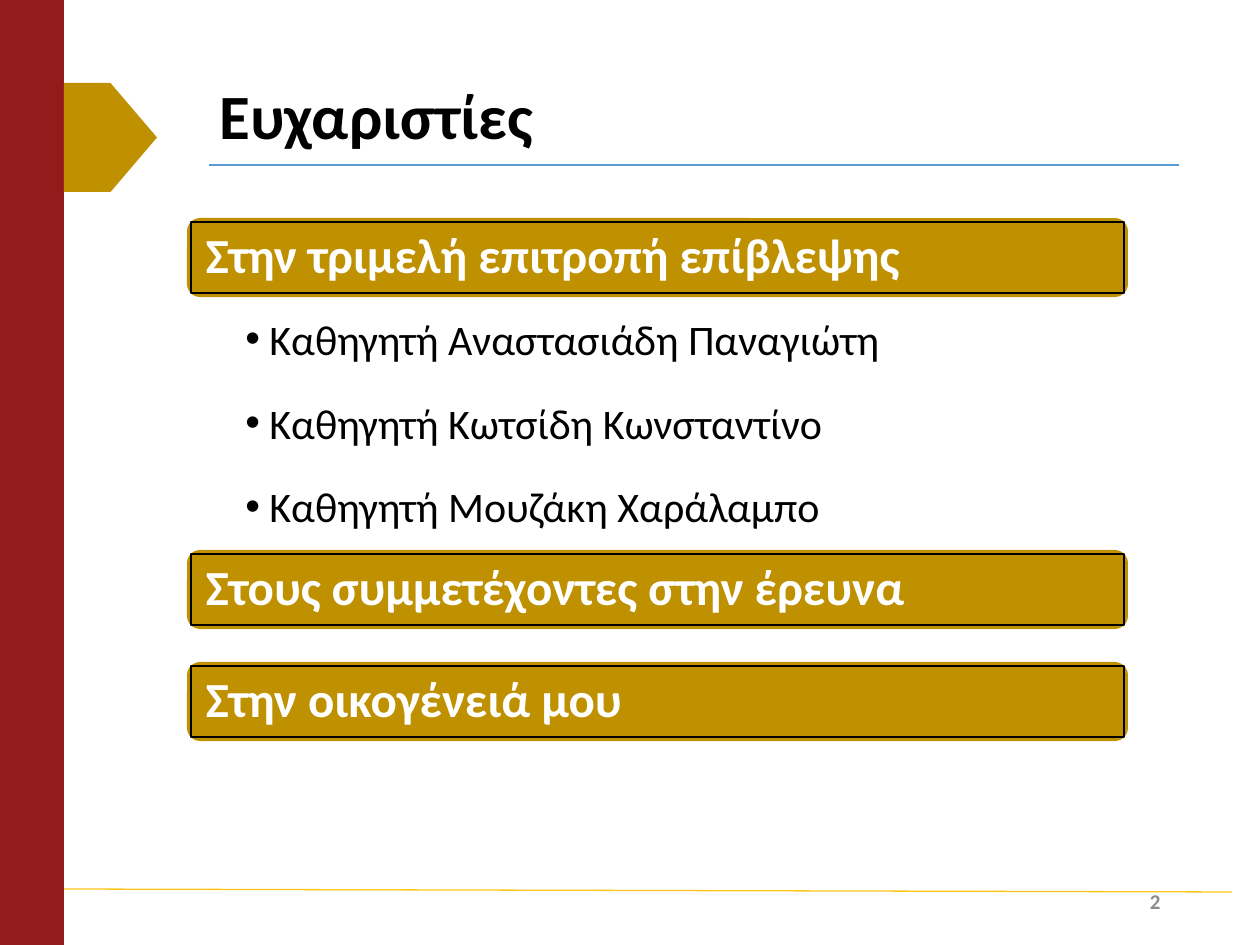
"""Build the acknowledgements slide with three headed bars and a list of names."""
from lxml import etree
from pptx import Presentation
from pptx.dml.color import RGBColor
from pptx.enum.shapes import MSO_CONNECTOR, MSO_SHAPE
from pptx.enum.text import MSO_ANCHOR, PP_ALIGN
from pptx.oxml.ns import qn
from pptx.util import Emu, Pt

STRAIGHT = MSO_CONNECTOR.STRAIGHT
RECTANGLE = MSO_SHAPE.RECTANGLE
ROUNDED = MSO_SHAPE.ROUNDED_RECTANGLE
PENTAGON = MSO_SHAPE.PENTAGON
MIDDLE, TOP = MSO_ANCHOR.MIDDLE, MSO_ANCHOR.TOP
LEFT, RIGHT = PP_ALIGN.LEFT, PP_ALIGN.RIGHT
SCALE = 914400 / 126
COLORS = {"red": "931B1B", "gold": "BF9000", "blue": "5B9BD5", "yellow": "FFC61A",
          "black": "000000", "white": "FFFFFF", "gray": "8C8C8C"}


def add_block(kind, box, color):
    block = slide.shapes.add_shape(kind, *[Emu(round(n * SCALE)) for n in box])
    block.shadow.inherit = False
    block.fill.solid()
    block.fill.fore_color.rgb = RGBColor.from_string(COLORS[color])
    block.line.fill.background()
    return block


def write_text(shape, lines, size, color, bold, anchor, align, spacing, bulleted=False):
    frame = shape.text_frame
    frame.word_wrap = True
    frame.vertical_anchor = anchor
    frame.text = "\n".join(lines)
    for index, paragraph in enumerate(frame.paragraphs):
        if bulleted:
            properties = paragraph._p.get_or_add_pPr()
            properties.set("marL", str(round(24 * SCALE)))
            properties.set("indent", str(round(-24 * SCALE)))
            etree.SubElement(properties, qn("a:buFont")).set("typeface", "Arial")
            etree.SubElement(properties, qn("a:buChar")).set("char", "•")
        space = Pt(7.5) if index else Pt(0)
        for name, value in {"alignment": align, "line_spacing": spacing,
                            "space_before": space}.items():
            setattr(paragraph, name, value)
        for name, value in {"name": "Calibri", "size": Pt(size), "bold": bold}.items():
            setattr(paragraph.font, name, value)
        paragraph.font.color.rgb = RGBColor.from_string(COLORS[color])


presentation = Presentation()
presentation.slide_width = Emu(round(1260 * SCALE))
presentation.slide_height = Emu(round(945 * SCALE))
slide = presentation.slides.add_slide(presentation.slide_layouts[5])

add_block(RECTANGLE, (0, 0, 64, 945), "red")
add_block(PENTAGON, (64, 83, 93, 109), "gold")

for ends, color in [((209, 165, 1179, 165), "blue"), ((64, 889, 1232, 892), "yellow")]:
    rule = slide.shapes.add_connector(STRAIGHT, *[Emu(round(n * SCALE)) for n in ends])
    rule.line.color.rgb = RGBColor.from_string(COLORS[color])
    rule.line.width = Pt(0.75)
    etree.SubElement(rule._element.spPr, qn("a:effectLst"))

title = slide.shapes.title
title_box = {"left": 207, "top": 78, "width": 970, "height": 82}
for name, value in title_box.items():
    setattr(title, name, Emu(round(value * SCALE)))
write_text(title, ["Ευχαριστίες"], 36, "black", True, MIDDLE, LEFT, 0.9)

names = slide.shapes.add_textbox(*[Emu(round(n * SCALE)) for n in (233, 287, 912, 255)])
professors = ["Αναστασιάδη Παναγιώτη", "Κωτσίδη Κωνσταντίνο", "Μουζάκη Χαράλαμπο"]
write_text(names, [f"Καθηγητή {professor}" for professor in professors],
           24, "black", False, TOP, LEFT, 1.4, bulleted=True)

headings = [(218, "Στην τριμελή επιτροπή επίβλεψης"),
            (550, "Στους συμμετέχοντες στην έρευνα"),
            (662, "Στην οικογένειά μου")]
for top, heading in headings:
    add_block(ROUNDED, (187, top, 941, 79), "gold")
    label = add_block(RECTANGLE, (191, top + 4, 933, 71), "gold")
    label.line.color.rgb = RGBColor.from_string(COLORS["black"])
    label.line.width = Pt(0.75)
    for side in ("left", "right", "top", "bottom"):
        setattr(label.text_frame, f"margin_{side}", Emu(round(15 * SCALE)))
    write_text(label, [heading], 28, "white", True, MIDDLE, LEFT, 0.9)

number = slide.shapes.add_textbox(*[Emu(round(n * SCALE)) for n in (890, 876, 283, 50)])
write_text(number, ["2"], 12, "gray", True, MIDDLE, RIGHT, 1.0)

presentation.save("out.pptx")
